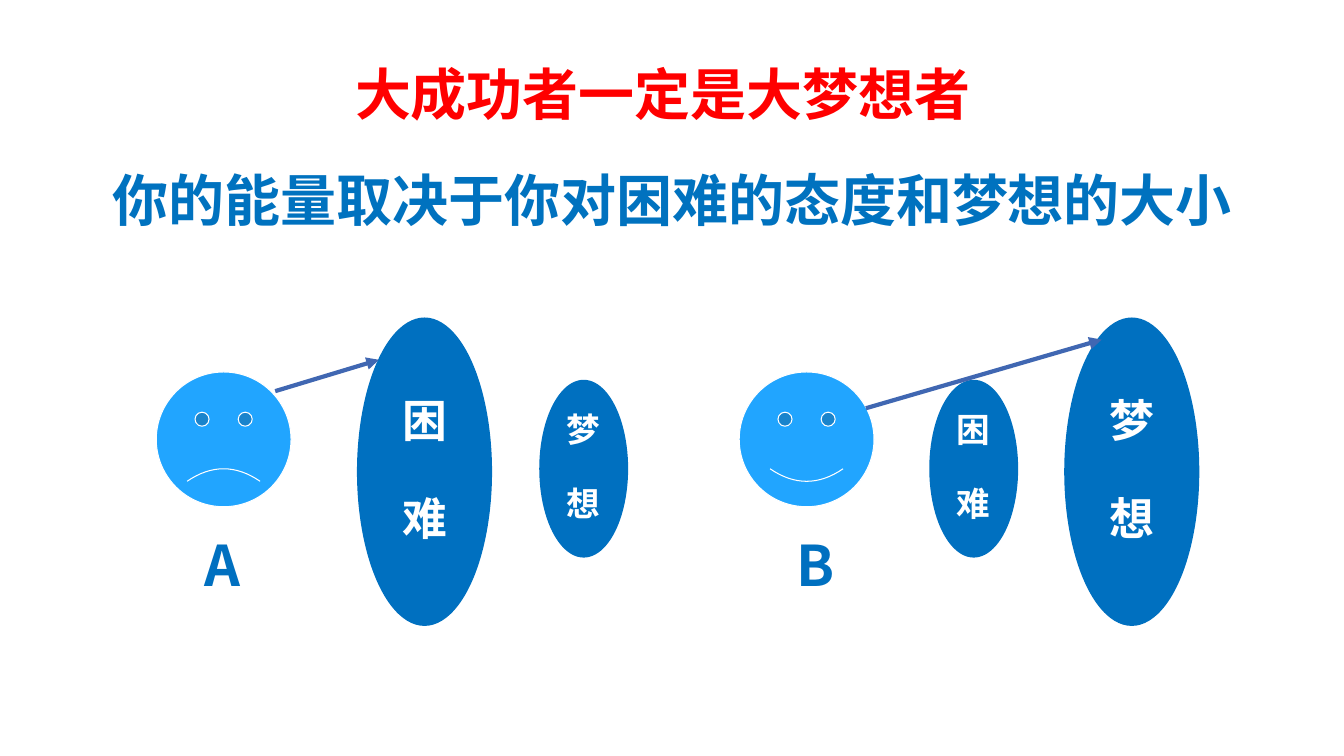
from lxml import etree
from pptx import Presentation
from pptx.dml.color import RGBColor
from pptx.enum import shapes, text
from pptx.oxml.ns import qn
from pptx.util import Pt

BLUE = RGBColor(0x00, 0x70, 0xC0)
TITLE_BLUE = RGBColor(0x00, 0x72, 0xBF)
FACE_BLUE = RGBColor(0x21, 0xA5, 0xFF)
ARROW_BLUE = RGBColor(0x40, 0x67, 0xB2)
RED = RGBColor(0xFF, 0x00, 0x00)
WHITE = RGBColor(0xFF, 0xFF, 0xFF)
CJK_FONT = "Noto Sans CJK SC"


def add_words(paragraph, words, size, color, font_name, align):
    paragraph.alignment = align
    paragraph.line_spacing = 0.9
    run = paragraph.add_run()
    run.text = words
    run.font.size = Pt(size)
    run.font.bold = True
    run.font.name = font_name
    run.font.color.rgb = color
    etree.SubElement(run.font._element, qn("a:ea"), typeface=CJK_FONT)


def add_shape(kind, left, top, width, height, fill):
    shape = slide.shapes.add_shape(kind, Pt(left), Pt(top), Pt(width), Pt(height))
    shape.shadow.inherit = False
    shape.fill.solid()
    shape.fill.fore_color.rgb = fill
    return shape


prs = Presentation()
prs.slide_width = Pt(960)
prs.slide_height = Pt(540)
slide = prs.slides.add_slide(prs.slide_layouts[5])

CENTER = text.PP_ALIGN.CENTER
LEFT = text.PP_ALIGN.LEFT

title = slide.shapes.title
title.left, title.top, title.width, title.height = Pt(33.8), Pt(120), Pt(893), Pt(67.5)
title.text_frame.word_wrap = True
title.text_frame.auto_size = text.MSO_AUTO_SIZE.NONE
title.text_frame.vertical_anchor = text.MSO_ANCHOR.TOP
add_words(title.text_frame.paragraphs[0], "你的能量取决于你对困难的态度和梦想的大小",
          40, TITLE_BLUE, "Calibri", CENTER)

for face_left, mouth in [(111.6, -0.0465), (528, 0.0465)]:
    face = add_shape(shapes.MSO_SHAPE.SMILEY_FACE, face_left, 265.7, 96.3, 96.3, FACE_BLUE)
    face.adjustments[0] = mouth
    face.line.color.rgb = WHITE
    face.line.width = Pt(0.75)

BIG = (226.8, 96.5, 220.3, 32)
SMALL = (271.3, 63.5, 127, 24)
for word, oval_left, (top, width, height, size) in [
    ("困难", 255, BIG),
    ("梦想", 385.2, SMALL),
    ("困难", 663.8, SMALL),
    ("梦想", 760.2, BIG),
]:
    oval = add_shape(shapes.MSO_SHAPE.OVAL, oval_left, top, width, height, BLUE)
    oval.line.fill.background()
    frame = oval.text_frame
    frame.word_wrap = False
    frame.vertical_anchor = text.MSO_ANCHOR.MIDDLE
    add_words(frame.paragraphs[0], word[0], size, WHITE, CJK_FONT, CENTER)
    lower = frame.add_paragraph()
    lower.space_before = Pt(1.1 * size)
    add_words(lower, word[1], size, WHITE, CJK_FONT, CENTER)

for start_x, start_y, end_x, end_y in [(196.6, 279.4, 270.7, 257), (618.5, 291.6, 787, 242.6)]:
    gaze = slide.shapes.add_connector(
        shapes.MSO_CONNECTOR.STRAIGHT, Pt(start_x), Pt(start_y), Pt(end_x), Pt(end_y))
    gaze.line.color.rgb = ARROW_BLUE
    gaze.line.width = Pt(3)
    etree.SubElement(gaze.line._get_or_add_ln(), qn("a:tailEnd"), type="triangle")
    etree.SubElement(gaze._element.spPr, qn("a:effectLst"))

for words, left, top, width, height, color, font_name, align in [
    ("A", 139, 380.9, 45.4, 55.4, BLUE, CJK_FONT, LEFT),
    ("B", 561.6, 380.9, 46.8, 55.4, BLUE, CJK_FONT, LEFT),
    ("大成功者一定是大梦想者", 184.3, 44.6, 578.2, 62.6, RED, "Calibri", CENTER),
]:
    label = slide.shapes.add_textbox(Pt(left), Pt(top), Pt(width), Pt(height))
    label.text_frame.word_wrap = True
    add_words(label.text_frame.paragraphs[0], words, 40, color, font_name, align)

prs.save("out.pptx")
